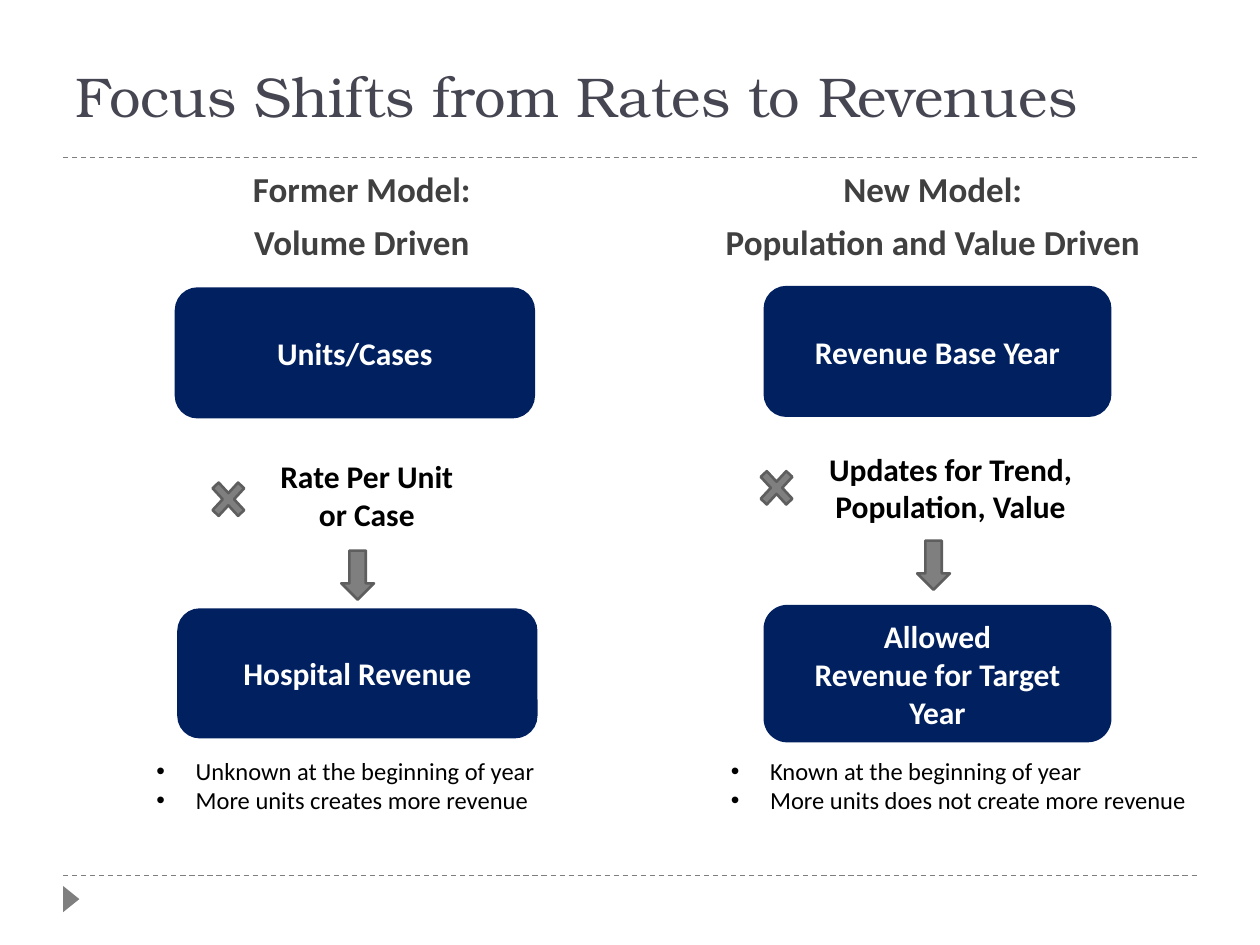
from lxml.etree import SubElement
from pptx import Presentation
from pptx.dml.color import RGBColor
from pptx.enum.dml import MSO_LINE
from pptx.enum.shapes import MSO_CONNECTOR, MSO_SHAPE
from pptx.enum.text import MSO_ANCHOR, MSO_AUTO_SIZE, PP_ALIGN
from pptx.oxml.ns import qn
from pptx.util import Cm, Pt

NAVY = RGBColor(0x00, 0x20, 0x60)
GRAY = RGBColor(0x7F, 0x7F, 0x7F)
EDGE = RGBColor(0x5E, 0x5E, 0x5E)
SLATE = RGBColor(0x46, 0x46, 0x53)
DARK = RGBColor(0x40, 0x40, 0x40)
BLACK = RGBColor(0, 0, 0)
WHITE = RGBColor(0xFF, 0xFF, 0xFF)


class Deck:
    serif = "TeX Gyre Bonum"
    sans = "Calibri"

    def __init__(self, slide):
        self.slide = slide

    def style(self, shape, text, size, color, bold=False, align=PP_ALIGN.CENTER,
              anchor=MSO_ANCHOR.MIDDLE, gap=0, font=sans, bullet=False):
        frame = shape.text_frame
        frame.text = text
        frame.word_wrap = True
        frame.auto_size = MSO_AUTO_SIZE.NONE
        frame.vertical_anchor = anchor
        for num, para in enumerate(frame.paragraphs):
            para.alignment = align
            para.space_before = Pt(gap if num else 0)
            if bullet:
                props = para._p.get_or_add_pPr()
                props.set("marL", str(Cm(0.79)))
                props.set("indent", str(-Cm(0.79)))
                SubElement(props, qn("a:buFont"), typeface="Arial")
                SubElement(props, qn("a:buChar"), char="•")
            for run in para.runs:
                run.font.name = font
                run.font.size = Pt(size)
                run.font.bold = bold
                run.font.color.rgb = color

    def holder(self, idx, box):
        shape = self.slide.placeholders[idx]
        shape.left, shape.top, shape.width, shape.height = map(Cm, box)
        return shape

    def title(self, text, box):
        self.style(self.holder(0, box), text, 32, SLATE,
                   align=PP_ALIGN.LEFT, font=self.serif)

    def head(self, idx, text, box):
        self.style(self.holder(idx, box), text, 20, DARK, bold=True,
                   anchor=MSO_ANCHOR.BOTTOM, gap=6)

    def points(self, idx, text, box):
        self.style(self.holder(idx, box), text, 14, BLACK, align=PP_ALIGN.LEFT,
                   anchor=MSO_ANCHOR.TOP, bullet=True)

    def label(self, text, box):
        shape = self.slide.shapes.add_textbox(*map(Cm, box))
        self.style(shape, text, 18, BLACK, bold=True, anchor=MSO_ANCHOR.TOP)

    def shape(self, kind, box, fill=GRAY, edge=EDGE):
        shape = self.slide.shapes.add_shape(kind, *map(Cm, box))
        shape.shadow.inherit = False
        shape.fill.solid()
        shape.fill.fore_color.rgb = fill
        if edge is None:
            shape.line.fill.background()
        else:
            shape.line.color.rgb = edge
            shape.line.width = Pt(1.5)
        return shape

    def card(self, text, box):
        shape = self.shape(MSO_SHAPE.ROUNDED_RECTANGLE, box, NAVY, NAVY)
        self.style(shape, text, 18, WHITE, bold=True)

    def rule(self, top):
        line = self.slide.shapes.add_connector(
            MSO_CONNECTOR.STRAIGHT, Cm(1.27), Cm(top), Cm(24.13), Cm(top))
        line.line.color.rgb = GRAY
        line.line.width = Pt(0.75)
        line.line.dash_style = MSO_LINE.DASH
        SubElement(line._element.spPr, qn("a:effectLst"))


def main():
    prs = Presentation()
    prs.slide_width, prs.slide_height = Cm(25.4), Cm(19.05)
    # The comparison layout holds a title, two heads and two lists
    deck = Deck(prs.slides.add_slide(prs.slide_layouts[4]))

    # Frame of the page
    deck.rule(3.18)
    deck.rule(17.65)
    mark = deck.shape(MSO_SHAPE.ISOSCELES_TRIANGLE, (1.17, 17.96, 0.53, 0.33), edge=None)
    mark.rotation = 90
    deck.title("Focus Shifts from Rates to Revenues", (1.27, 0.64, 22.86, 2.54))

    # Heads of both models
    deck.head(1, "Former Model:\nVolume Driven", (1.68, 3.5, 11.23, 1.91))
    deck.head(3, "New Model:\nPopulation and Value Driven", (12.67, 2.31, 12.27, 3.1))

    # Start and result of each model
    deck.card("Units/Cases", (3.55, 5.82, 7.21, 2.59))
    deck.card("Hospital Revenue", (3.6, 12.29, 7.21, 2.57))
    deck.card("Revenue Base Year", (15.42, 5.79, 6.96, 2.59))
    deck.card("Allowed\nRevenue for Target Year", (15.42, 12.22, 6.96, 2.72))

    # Factors between them
    deck.label("Rate Per Unit or Case", (5.11, 9.09, 4.57, 1.8))
    deck.label("Updates for Trend, Population, Value", (15.95, 8.94, 6.43, 1.8))
    for left, top in ((4.11, 9.53), (15.16, 9.3)):
        times = deck.shape(MSO_SHAPE.MATH_MULTIPLY, (left, top, 0.99, 1.07))
        times.adjustments[0] = 0.17
    for left, top in ((6.88, 11.1), (18.49, 10.9)):
        deck.shape(MSO_SHAPE.DOWN_ARROW, (left, top, 0.66, 0.99))

    # Effects of each model
    deck.points(2, "Unknown at the beginning of year\nMore units creates more revenue",
                (2.9, 15.11, 8.64, 2.06))
    deck.points(4, "Known at the beginning of year\nMore units does not create more revenue",
                (14.48, 15.11, 10.16, 2.06))

    prs.save("out.pptx")


if __name__ == "__main__":
    main()
